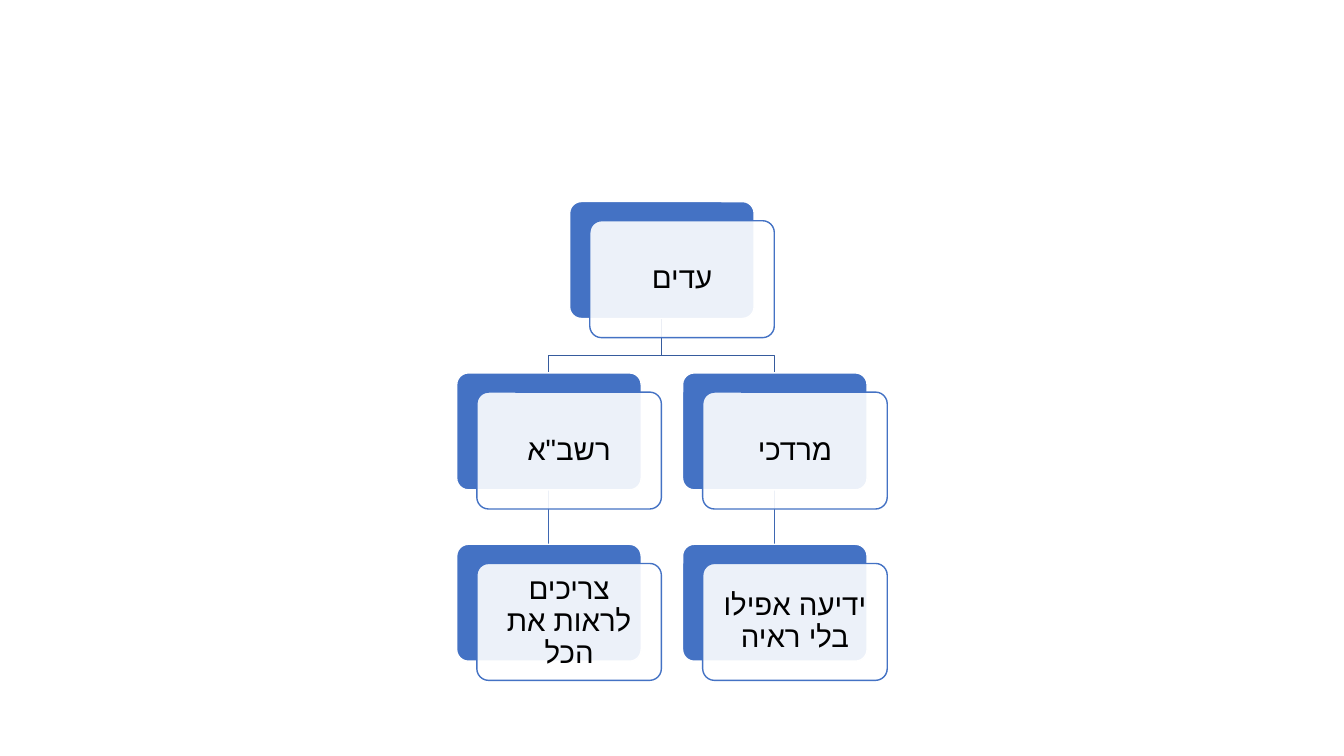
from lxml import etree
from pptx import Presentation
from pptx.dml.color import RGBColor
from pptx.enum.shapes import MSO_CONNECTOR, MSO_SHAPE
from pptx.enum.text import MSO_ANCHOR, PP_ALIGN
from pptx.oxml.ns import qn
from pptx.util import Pt

STRAIGHT = MSO_CONNECTOR.STRAIGHT
ROUND = MSO_SHAPE.ROUNDED_RECTANGLE
MIDDLE = MSO_ANCHOR.MIDDLE
CENTER = PP_ALIGN.CENTER

# One px is a hundredth of an inch
PX = 9144
COLORS = {
    "blue": "4472C4",
    "white": "FFFFFF",
    "black": "000000",
    "fork": "365B9D",
    "stem": "3E67B2",
}

# Grid of the tree
CARD_W, CARD_H = 183, 116
TOP, ROW_STEP = 200, 170
LEFT, HALF_STEP = 453, 112
SHIFT_X, SHIFT_Y = 20, 19


def px(n):
    return n * PX


def color(name):
    return RGBColor.from_string(COLORS[name])


class Tree:
    font = "Calibri"
    hebrew = "Arial"
    size = Pt(21)
    width = Pt(1)

    def __init__(self, slide):
        self.shapes = slide.shapes

    def stroke(self, item, name):
        item.line.color.rgb = color(name)
        item.line.width = self.width

    def stem(self, x, top, bottom):
        line = self.shapes.add_connector(STRAIGHT, px(x), px(top), px(x), px(bottom))
        self.stroke(line, "stem")
        etree.SubElement(line._element.spPr, qn("a:effectLst"))

    def fork(self, x, top, end, bottom):
        mid = (top + bottom) // 2 + 10
        form = self.shapes.build_freeform(x, top, scale=PX)
        form.add_line_segments([(x, mid), (end, mid), (end, bottom)], close=False)
        shape = form.convert_to_shape()
        shape.fill.background()
        shape.shadow.inherit = False
        self.stroke(shape, "fork")

    def panel(self, x, y, fill, line):
        shape = self.shapes.add_shape(ROUND, px(x), px(y), px(CARD_W), px(CARD_H))
        shape.adjustments[0] = 0.1
        shape.shadow.inherit = False
        shape.fill.solid()
        shape.fill.fore_color.rgb = color(fill)
        self.stroke(shape, line)
        return shape

    def card(self, x, y, text):
        self.panel(x, y, "blue", "white")
        front = self.panel(x + SHIFT_X, y + SHIFT_Y, "white", "blue")
        tint = front._element.spPr.find(qn("a:solidFill")).find(qn("a:srgbClr"))
        etree.SubElement(tint, qn("a:alpha"), val="90000")
        self.label(front.text_frame, text)

    def label(self, frame, text):
        frame.word_wrap = True
        frame.vertical_anchor = MIDDLE
        frame.margin_left = frame.margin_right = px(9)
        frame.margin_top = frame.margin_bottom = px(9)
        para = frame.paragraphs[0]
        para.alignment = CENTER
        para.line_spacing = 0.9
        para._p.get_or_add_pPr().set("rtl", "1")
        run = para.add_run()
        run.text = text
        run.font.name = self.font
        run.font.size = self.size
        run.font.color.rgb = color("black")
        props = run._r.get_or_add_rPr()
        props.set("lang", "he-IL")
        etree.SubElement(props, qn("a:cs"), typeface=self.hebrew)


def main():
    deck = Presentation()
    deck.slide_width, deck.slide_height = px(1333), px(750)
    tree = Tree(deck.slides.add_slide(deck.slide_layouts[6]))

    # Cards by column (in half steps) and row
    cards = [
        (1, 0, "עדים"),
        (0, 1, 'רשב"א'),
        (0, 2, "צריכים לראות את הכל"),
        (2, 1, "מרדכי"),
        (2, 2, "ידיעה אפילו בלי ראיה"),
    ]
    mids = [LEFT + HALF_STEP * col + CARD_W // 2 for col in range(3)]
    tops = [TOP + ROW_STEP * row for row in range(3)]

    # Links lie behind the cards
    for col in (2, 0):
        tree.stem(mids[col], tops[1] + CARD_H, tops[2])
        tree.fork(mids[1], tops[0] + CARD_H, mids[col], tops[1])

    # Cards
    for col, row, text in cards:
        tree.card(LEFT + HALF_STEP * col, tops[row], text)

    deck.save("out.pptx")


if __name__ == "__main__":
    main()
